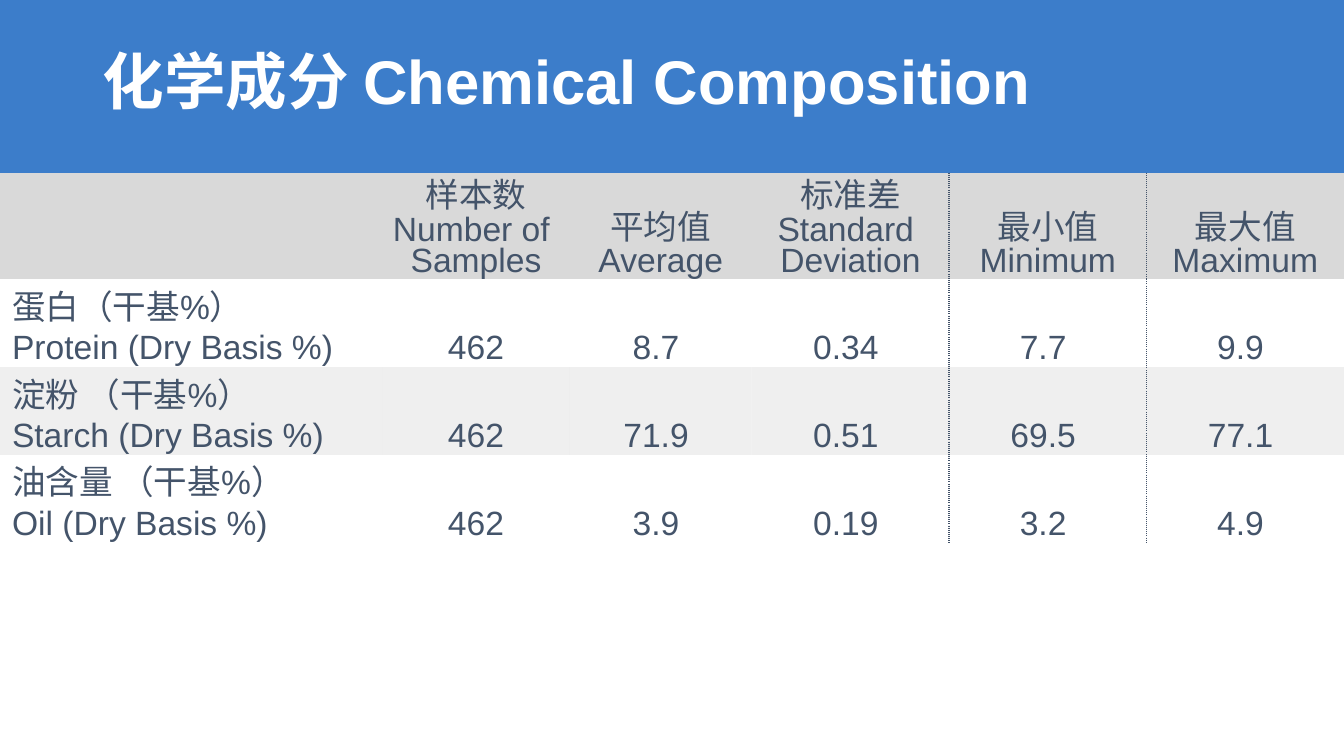
from lxml import etree
from pptx import Presentation
from pptx.dml.color import RGBColor
from pptx.enum import shapes, text
from pptx.oxml import ns
from pptx.util import Pt

HUES = {"band": "3C7DCA", "ink": "44546A", "head": "D9D9D9", "white": "FFFFFF"}
PLAIN = "{2D5ABB26-0587-4C30-8999-92F81FD0307C}"
COLS = [273, 134, 130, 141, 141, 141]
ROWS = [76.1, 62.7, 62.7, 62.7]
DATA = [
    ["", "样本数\vNumber of \vSamples", "平均值\vAverage",
     "标准差\vStandard \vDeviation", "最小值\vMinimum", "最大值\vMaximum"],
    ["蛋白（干基%）\nProtein (Dry Basis %)", "462", "8.7 ", "0.34 ", "7.7 ", "9.9 "],
    ["淀粉 （干基%）\nStarch (Dry Basis %)", "462", "71.9 ", "0.51 ", "69.5 ", "77.1 "],
    ["油含量 （干基%）\nOil (Dry Basis %)", "462", "3.9 ", "0.19 ", "3.2 ", "4.9 "],
]
MID, LOW = text.MSO_ANCHOR.MIDDLE, text.MSO_ANCHOR.BOTTOM
LEFT, MAIN = text.PP_ALIGN.LEFT, text.PP_ALIGN.CENTER


def put(item, vals):
    for key, val in vals.items():
        setattr(item, key, val)


def style(frame, para, font, hue):
    for par in frame.paragraphs:
        put(par, para)
        for run in par.runs:
            put(run.font, {"name": "Arial", **font})
            run.font.color.rgb = RGBColor.from_string(HUES[hue])


def banner(slide, x, y, w, h):
    band = slide.shapes.add_shape(shapes.MSO_SHAPE.RECTANGLE, Pt(x), Pt(y), Pt(w), Pt(h))
    band.shadow.inherit = False
    band.fill.solid()
    band.fill.fore_color.rgb = RGBColor.from_string(HUES["band"])
    band.line.fill.background()
    title = slide.shapes.title
    slide.shapes._spTree.append(title._element)
    put(title, {"left": Pt(x + 66), "top": Pt(y + 13.7), "width": Pt(828), "height": Pt(93.6)})
    frame = title.text_frame
    frame.text = "化学成分 Chemical Composition"
    put(frame, {"vertical_anchor": MID, "word_wrap": True})
    style(frame, {"alignment": LEFT, "line_spacing": 0.9},
          {"size": Pt(44), "bold": True}, "white")


def edge(cell, side, width):
    line = etree.Element(ns.qn(f"a:ln{side}"), w=str(Pt(width)))
    fill = etree.SubElement(line, ns.qn("a:solidFill"))
    etree.SubElement(fill, ns.qn("a:srgbClr"), val=HUES["ink"])
    etree.SubElement(line, ns.qn("a:prstDash"), val="sysDot")
    cell._tc.get_or_add_tcPr().insert(0, line)


def paint(cell, row):
    if row % 2:
        cell.fill.background()
        return
    cell.fill.solid()
    cell.fill.fore_color.rgb = RGBColor.from_string(HUES["head"])
    if row:
        tone = cell._tc.tcPr.find(".//" + ns.qn("a:srgbClr"))
        etree.SubElement(tone, ns.qn("a:alpha"), val="40000")


def grid(slide, x, y):
    table = slide.shapes.add_table(len(ROWS), len(COLS), Pt(x), Pt(y),
                                   Pt(sum(COLS)), Pt(sum(ROWS))).table
    table._tbl.tblPr.find(ns.qn("a:tableStyleId")).text = PLAIN
    put(table, {"first_row": False, "horz_banding": False})
    for col, width in zip(table.columns, COLS):
        col.width = Pt(width)
    for r, (line, high) in enumerate(zip(DATA, ROWS)):
        table.rows[r].height = Pt(high)
        for c, words in enumerate(line):
            cell = table.cell(r, c)
            label = c == 0
            pad = 0 if r and c else 0.7
            cell.text = words
            put(cell, {"margin_left": Pt(8.6 if label else pad), "margin_right": Pt(pad),
                       "margin_top": Pt(pad), "margin_bottom": Pt(0),
                       "vertical_anchor": MID if label else LOW})
            style(cell.text_frame, {"alignment": LEFT if label else MAIN,
                                    "line_spacing": 1.0 if r else 0.85},
                  {"size": Pt(24)}, "ink")
            paint(cell, r)
            rules = {3: 1.5, 4: 0.75 if r else 0}
            for side, width in (("R", rules.get(c)), ("L", rules.get(c - 1))):
                if width:
                    edge(cell, side, width)


def main():
    deck = Presentation()
    put(deck, {"slide_width": Pt(960), "slide_height": Pt(540)})
    slide = deck.slides.add_slide(deck.slide_layouts[5])
    banner(slide, 0, 0, 960, 130.3)
    grid(slide, 0, 123.4)
    deck.save("out.pptx")


if __name__ == "__main__":
    main()
